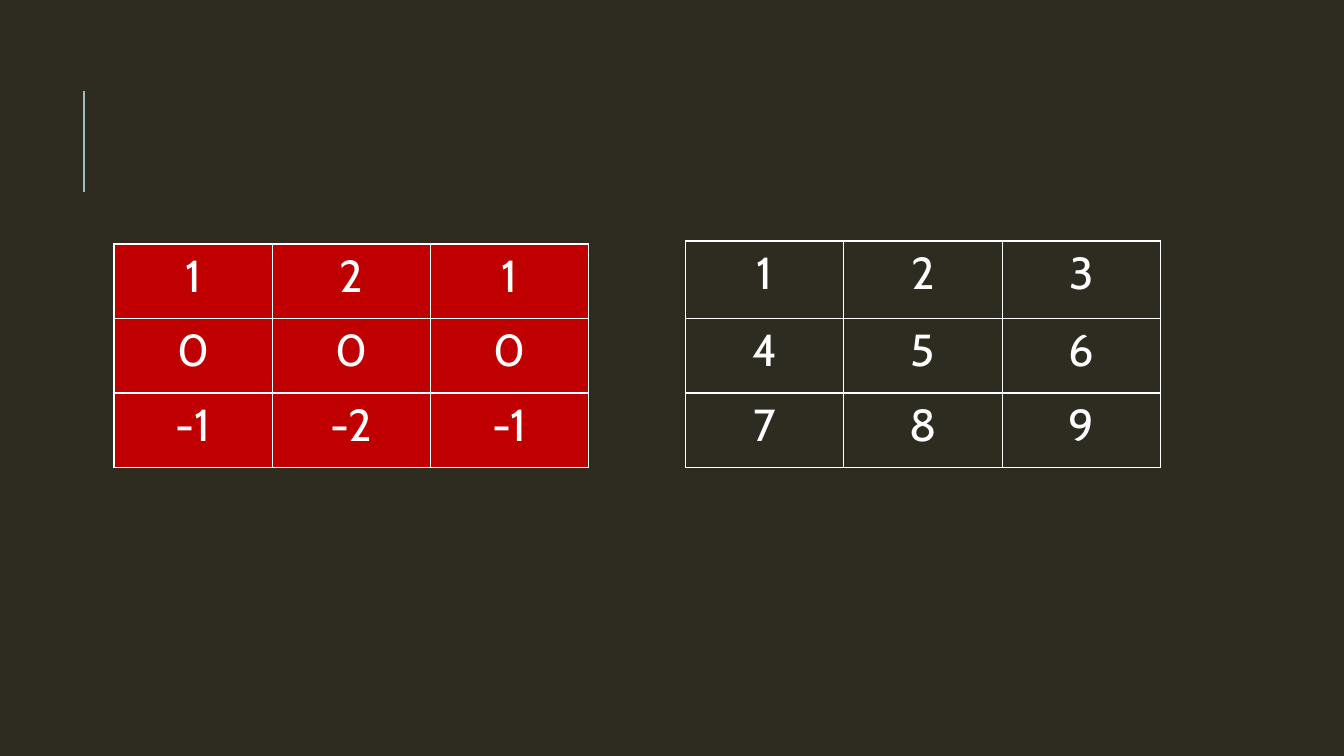
from dataclasses import dataclass

from lxml import etree
from pptx import Presentation
from pptx.dml.color import RGBColor
from pptx.enum.shapes import MSO_CONNECTOR
from pptx.enum.text import PP_ALIGN
from pptx.oxml.ns import qn
from pptx.slide import Slide
from pptx.table import _Cell
from pptx.util import Emu, Pt

EMU_PER_PX = 9144  # 100 px to the inch
STRAIGHT = MSO_CONNECTOR.STRAIGHT
CENTER = PP_ALIGN.CENTER
BLANK_LAYOUT = 6


@dataclass(frozen=True)
class Theme:
    background: str = "2E2B21"
    accent: str = "9CBEBD"
    kernel: str = "C00000"
    light: str = "FFFFFF"
    font: str = "Cabin"
    digit_size: int = 32
    border_width: float = 1
    accent_width: float = 1.5


@dataclass(frozen=True)
class Matrix:
    left: int
    top: int
    row_heights: tuple[int, ...]
    values: tuple[tuple[int, ...], ...]
    fill: str | None = None


THEME = Theme()
COLUMN_WIDTH = 157
MATRICES = (
    Matrix(113, 242, (74, 74, 74), ((1, 2, 1), (0, 0, 0), (-1, -2, -1)), THEME.kernel),
    Matrix(680, 239, (77, 74, 74), ((1, 2, 3), (4, 5, 6), (7, 8, 9))),
)


def px(length: int) -> Emu:
    return Emu(length * EMU_PER_PX)


def color(code: str) -> RGBColor:
    return RGBColor.from_string(code)


def add_borders(cell: _Cell) -> None:
    properties = cell._tc.get_or_add_tcPr()
    for side in ("a:lnL", "a:lnR", "a:lnT", "a:lnB"):
        border = etree.SubElement(properties, qn(side), w=str(Pt(THEME.border_width)))
        fill = etree.SubElement(border, qn("a:solidFill"))
        etree.SubElement(fill, qn("a:srgbClr"), val=THEME.light)


def fill_cell(cell: _Cell, value: int, fill: str | None) -> None:
    add_borders(cell)
    if fill:
        cell.fill.solid()
        cell.fill.fore_color.rgb = color(fill)
    else:
        cell.fill.background()
    cell.text = str(value)
    para = cell.text_frame.paragraphs[0]
    para.alignment = CENTER
    para.font.name = THEME.font
    para.font.size = Pt(THEME.digit_size)
    para.font.bold = False
    para.font.color.rgb = color(THEME.light)


def add_matrix(page: Slide, matrix: Matrix) -> None:
    row_count, column_count = len(matrix.values), len(matrix.values[0])
    table = page.shapes.add_table(
        row_count, column_count, px(matrix.left), px(matrix.top),
        px(column_count * COLUMN_WIDTH), px(sum(matrix.row_heights)),
    ).table
    table.first_row = False
    table.horz_banding = False
    for column in table.columns:
        column.width = px(COLUMN_WIDTH)
    for row, height, values in zip(table.rows, matrix.row_heights, matrix.values):
        row.height = px(height)
        for cell, value in zip(row.cells, values):
            fill_cell(cell, value, matrix.fill)


def add_accent_line(page: Slide) -> None:
    line = page.shapes.add_connector(STRAIGHT, px(83), px(190), px(83), px(90))
    line.line.color.rgb = color(THEME.accent)
    line.line.width = Pt(THEME.accent_width)
    etree.SubElement(line._element.spPr, qn("a:effectLst"))


def main() -> None:
    deck = Presentation()
    deck.slide_width, deck.slide_height = px(1333), px(750)
    page = deck.slides.add_slide(deck.slide_layouts[BLANK_LAYOUT])

    # Background and title accent
    page.background.fill.solid()
    page.background.fill.fore_color.rgb = color(THEME.background)
    add_accent_line(page)

    # Kernel and input matrices
    for matrix in MATRICES:
        add_matrix(page, matrix)

    deck.save("out.pptx")


if __name__ == "__main__":
    main()
